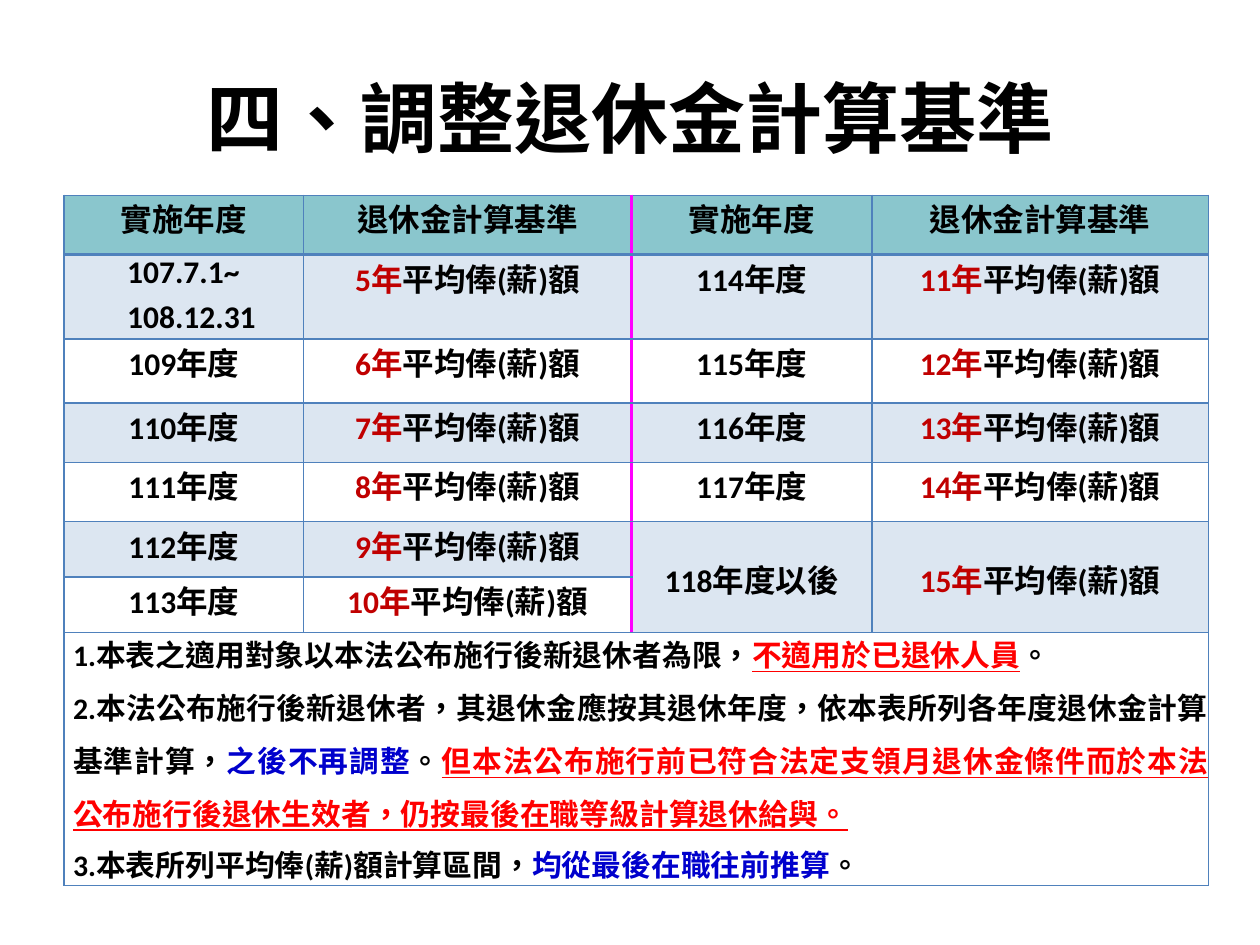
from dataclasses import dataclass
from itertools import groupby

from lxml.etree import SubElement
from pptx import Presentation
from pptx.dml.color import RGBColor
from pptx.enum.text import MSO_ANCHOR, PP_ALIGN as Align
from pptx.oxml.ns import qn
from pptx.util import Inches, Pt

COLORS = {
    "black": "000000", "header": "8AC6CD", "band": "DCE6F1", "grid": "4F81BC",
    "divider": "FF00FF", "years": "C00000", "warning": "FF0000", "note": "0000CC",
}
CJK_FONT = "Noto Sans CJK SC"
LATIN_FONT = "Calibri"
COLUMN_WIDTHS = (1.9, 2.6, 1.91, 2.67)
ROW_HEIGHTS = (0.47, 0.67, 0.51, 0.47, 0.47, 0.44, 0.44, 1.71)
NOTES_ROW = len(ROW_HEIGHTS) - 1
MERGED_ROW = NOTES_ROW - 2


@dataclass
class Span:
    text: str
    color: str = "black"
    underline: bool = False


@dataclass
class Line:
    spans: list[Span]
    align: Align = Align.CENTER
    size: float = 18
    indent: float = 0
    before: float = 0
    spacing: float | Pt | None = None


def year_line(label: str) -> Line:
    return Line([Span(label)])


def base_line(years: int) -> Line:
    return Line([Span(f"{years}年", "years"), Span("平均俸(薪)額")])


FIRST_PERIOD = [
    Line([Span("107.7.1~")], Align.LEFT, indent=0.5, spacing=Pt(21.4)),
    Line([Span("108.12.31")], Align.LEFT, indent=0.5, before=3.5),
]
NOTES = [
    Line([Span("1.本表之適用對象以本法公布施行後新退休者為限，"),
          Span("不適用於已退休人員", "warning", True), Span("。")],
         Align.LEFT, 17, 0.07),
    Line([Span("2.本法公布施行後新退休者，其退休金應按其退休年度，"
               "依本表所列各年度退休金計算 基準計算，"),
          Span("之後不再調整", "note"), Span("。"),
          Span("但本法公布施行前已符合法定支領月退休金條件而於本法 "
               "公布施行後退休生效者，仍按最後在職等級計算退休給與。", "warning", True)],
         Align.JUSTIFY, 17, 0.07, 0.1, 1.22),
    Line([Span("3.本表所列平均俸(薪)額計算區間，"),
          Span("均從最後在職往前推算", "note"), Span("。")],
         Align.LEFT, 17, 0.07, 4.6),
]


def rgb(name: str) -> RGBColor:
    return RGBColor.from_string(COLORS[name])


def set_east_asian(run) -> None:
    """Use Traditional Chinese glyph forms of the CJK font."""
    properties = run._r.get_or_add_rPr()
    properties.set("lang", "zh-TW")
    SubElement(properties, qn("a:ea")).set("typeface", CJK_FONT)


def add_span(paragraph, span: Span) -> None:
    """Add one run for each stretch of Latin or CJK characters."""
    for is_cjk, characters in groupby(span.text, lambda character: character >= "\u3000"):
        run = paragraph.add_run()
        run.text = "".join(characters)
        run.font.color.rgb = rgb(span.color)
        run.font.name = CJK_FONT if is_cjk else LATIN_FONT
        if span.underline:
            run.font.underline = True
        set_east_asian(run)


def fill_text(frame, lines: list[Line]) -> None:
    for index, line in enumerate(lines):
        paragraph = frame.add_paragraph() if index else frame.paragraphs[0]
        paragraph.alignment = line.align
        if line.indent:
            properties = paragraph._p.get_or_add_pPr()
            properties.set("marL", str(Inches(line.indent)))
            properties.set("indent", "0")
        if line.before:
            paragraph.space_before = Pt(line.before)
        if line.spacing:
            paragraph.line_spacing = line.spacing
        paragraph.font.size = Pt(line.size)
        paragraph.font.bold = True
        for span in line.spans:
            add_span(paragraph, span)


def set_borders(cell, row: int, column: int) -> None:
    grid, header, divider = ("grid", 1), ("grid", 2), ("divider", 2.25)
    in_grid = row < NOTES_ROW
    borders = {
        "a:lnL": divider if in_grid and column == 2 else grid,
        "a:lnR": divider if in_grid and column == 1 else grid,
        "a:lnT": header if row == 1 else grid,
        "a:lnB": header if row == 0 else grid,
    }
    properties = cell._tc.get_or_add_tcPr()
    for position, (tag, (color, width)) in enumerate(borders.items()):
        border = properties.makeelement(qn(tag), {"w": str(Pt(width))})
        fill = SubElement(border, qn("a:solidFill"))
        SubElement(fill, qn("a:srgbClr")).set("val", COLORS[color])
        properties.insert(position, border)


def format_cell(cell, row: int, column: int) -> None:
    cell.margin_left = cell.margin_right = cell.margin_top = cell.margin_bottom = 0
    if row == 0 or (row < NOTES_ROW and (row % 2 or (row > MERGED_ROW and column > 1))):
        cell.fill.solid()
        cell.fill.fore_color.rgb = rgb("band" if row else "header")
    else:
        cell.fill.background()
    set_borders(cell, row, column)


def add_base_table(slide) -> None:
    table = slide.shapes.add_table(
        len(ROW_HEIGHTS), len(COLUMN_WIDTHS), Inches(0.51), Inches(1.55),
        Inches(sum(COLUMN_WIDTHS)), Inches(sum(ROW_HEIGHTS))).table
    table.first_row = table.horz_banding = False
    for column, width in zip(table.columns, COLUMN_WIDTHS):
        column.width = Inches(width)
    for row, height in zip(table.rows, ROW_HEIGHTS):
        row.height = Inches(height)
    for row in range(len(ROW_HEIGHTS)):
        for column in range(len(COLUMN_WIDTHS)):
            format_cell(table.cell(row, column), row, column)

    for column in (2, 3):
        merged = table.cell(MERGED_ROW, column)
        merged.merge(table.cell(MERGED_ROW + 1, column))
        merged.margin_top = Inches(0.27)
    table.cell(NOTES_ROW, 0).merge(table.cell(NOTES_ROW, 3))

    for column, heading in enumerate(("實施年度", "退休金計算基準") * 2):
        fill_text(table.cell(0, column).text_frame, [Line([Span(heading)])])
    for row in range(1, NOTES_ROW):
        left_year = FIRST_PERIOD if row == 1 else [year_line(f"{107 + row}年度")]
        fill_text(table.cell(row, 0).text_frame, left_year)
        fill_text(table.cell(row, 1).text_frame, [base_line(4 + row)])
        if row <= MERGED_ROW:
            suffix = "以後" if row == MERGED_ROW else ""
            fill_text(table.cell(row, 2).text_frame, [year_line(f"{113 + row}年度{suffix}")])
            fill_text(table.cell(row, 3).text_frame, [base_line(10 + row)])
    fill_text(table.cell(NOTES_ROW, 0).text_frame, NOTES)


def add_title(slide) -> None:
    title = slide.shapes.title
    title.left, title.top = Inches(0.5), Inches(0.3)
    title.width, title.height = Inches(9), Inches(1.25)
    title.text_frame.vertical_anchor = MSO_ANCHOR.MIDDLE
    paragraph = title.text_frame.paragraphs[0]
    paragraph.alignment = Align.CENTER
    paragraph.font.size = Pt(44)
    paragraph.font.bold = True
    paragraph.font.name = "Arial"
    paragraph.font.color.rgb = rgb("black")
    run = paragraph.add_run()
    run.text = "四、調整退休金計算基準"
    set_east_asian(run)


def main() -> None:
    presentation = Presentation()
    presentation.slide_width, presentation.slide_height = Inches(10), Inches(7.5)
    slide = presentation.slides.add_slide(presentation.slide_layouts[5])
    add_title(slide)
    add_base_table(slide)
    presentation.save("out.pptx")


if __name__ == "__main__":
    main()
